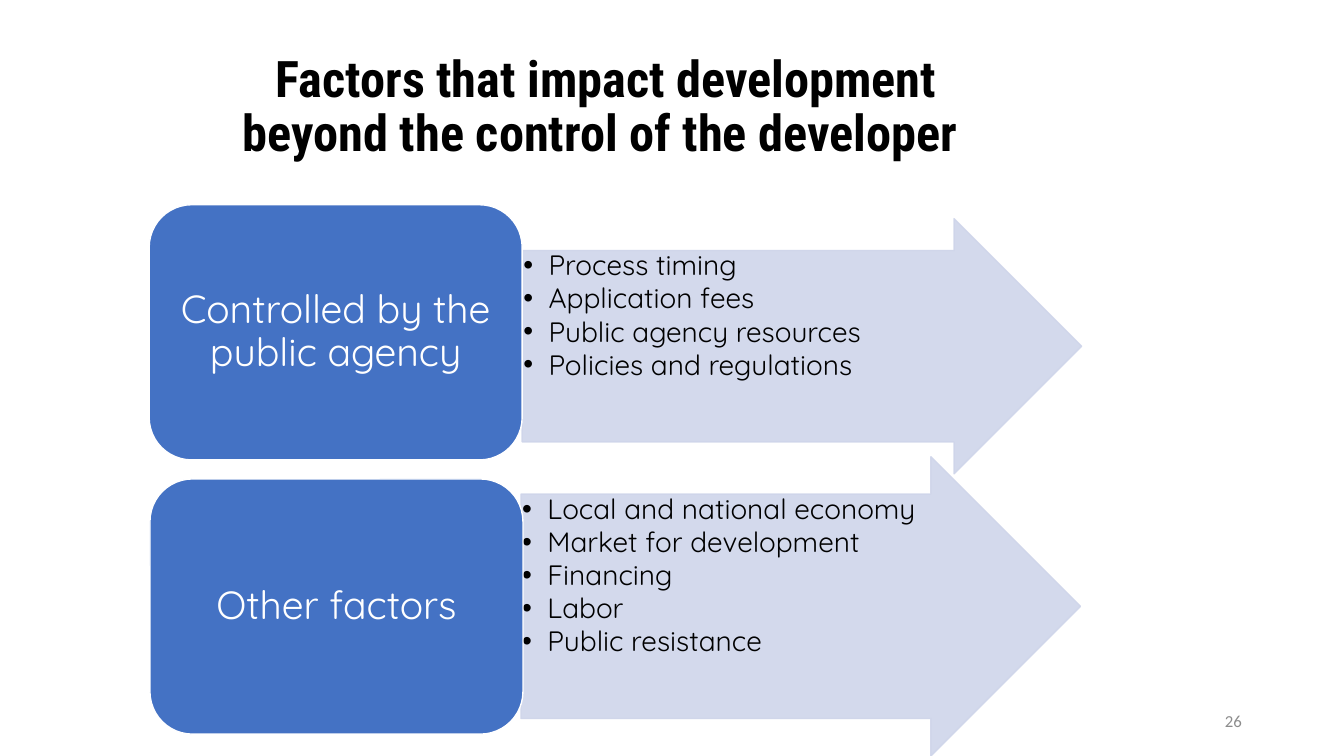
"""Build a slide on the factors that impact development beyond the developer's control."""
from dataclasses import dataclass

from lxml.etree import SubElement
from pptx import Presentation
from pptx.dml.color import RGBColor
from pptx.enum.shapes import MSO_SHAPE as Preset
from pptx.enum.text import MSO_ANCHOR as Anchor, PP_ALIGN as Align
from pptx.oxml.ns import qn
from pptx.util import Cm, Pt

COLORS = {"black": "000000", "white": "FFFFFF", "gray": "8C8C8C", "blue": "4472C4", "pale": "CFD5EA"}


@dataclass(frozen=True)
class Box:
    left: float
    top: float
    width: float
    height: float

    def lengths(self) -> list:
        return [Cm(value) for value in (self.left, self.top, self.width, self.height)]


@dataclass(frozen=True)
class TextStyle:
    font: str
    size: int
    color: str
    align: Align
    bold: bool = False
    spacing: float = 1.0
    after: int = 0
    bulleted: bool = False


@dataclass(frozen=True)
class FactorGroup:
    name: str
    card: Box
    arrow: Box
    factors: tuple[str, ...]


TITLE = TextStyle("Roboto Condensed", 36, "black", Align.CENTER, bold=True, spacing=0.9)
NUMBER = TextStyle("Calibri", 12, "gray", Align.RIGHT)
CARD = TextStyle("Quicksand", 28, "white", Align.CENTER, spacing=0.9)
FACTOR = TextStyle("Quicksand", 20, "black", Align.LEFT, spacing=0.9, after=2, bulleted=True)

GROUPS = (
    FactorGroup(
        "Controlled by the public agency",
        Box(3.76, 5.16, 9.4, 6.43),
        Box(13.16, 5.51, 14.1, 6.43),
        ("Process timing", "Application fees", "Public agency resources", "Policies and regulations"),
    ),
    FactorGroup(
        "Other factors",
        Box(3.78, 12.07, 9.4, 6.43),
        Box(13.13, 11.51, 14.1, 7.54),
        ("Local and national economy", "Market for development", "Financing", "Labor", "Public resistance"),
    ),
)


def rgb(name: str) -> RGBColor:
    return RGBColor.from_string(COLORS[name])


def add_bullet(paragraph) -> None:
    properties = paragraph._p.get_or_add_pPr()
    properties.set("marL", str(Cm(0.635)))
    properties.set("indent", str(-Cm(0.635)))
    SubElement(properties, qn("a:buFont"), typeface="Arial")
    SubElement(properties, qn("a:buChar"), char="•")


def write(shape, paragraphs: tuple[str, ...], style: TextStyle, anchor: Anchor,
          side: float = 0.25, edge: float = 0.13) -> None:
    frame = shape.text_frame
    frame.word_wrap = True
    frame.vertical_anchor = anchor
    frame.margin_left = frame.margin_right = Cm(side)
    frame.margin_top = frame.margin_bottom = Cm(edge)
    for index, text in enumerate(paragraphs):
        paragraph = frame.add_paragraph() if index else frame.paragraphs[0]
        paragraph.alignment = style.align
        paragraph.line_spacing = style.spacing
        paragraph.space_after = Pt(style.after)
        if style.bulleted:
            add_bullet(paragraph)
        for line_index, line in enumerate(text.split("\n")):
            if line_index:
                paragraph.add_line_break()
            run = paragraph.add_run()
            run.text = line
            run.font.name = style.font
            run.font.size = Pt(style.size)
            run.font.bold = style.bold
            run.font.color.rgb = rgb(style.color)


def add_text(slide, box: Box, text: str, style: TextStyle) -> None:
    write(slide.shapes.add_textbox(*box.lengths()), (text,), style, Anchor.MIDDLE)


def add_panel(slide, preset: Preset, box: Box, fill: str, line: str):
    shape = slide.shapes.add_shape(preset, *box.lengths())
    shape.shadow.inherit = False
    shape.fill.solid()
    shape.fill.fore_color.rgb = rgb(fill)
    shape.line.color.rgb = rgb(line)
    shape.line.width = Pt(1)
    return shape


def add_group(slide, group: FactorGroup) -> None:
    arrow = add_panel(slide, Preset.RIGHT_ARROW, group.arrow, "pale", "pale")
    arrow.adjustments[0] = 0.75
    arrow.adjustments[1] = 0.5
    for color in arrow._element.spPr.iter(qn("a:srgbClr")):
        SubElement(color, qn("a:alpha"), val="90000")
    write(arrow, group.factors, FACTOR, Anchor.TOP, side=0.03, edge=0.03)
    card = add_panel(slide, Preset.ROUNDED_RECTANGLE, group.card, "blue", "white")
    write(card, (group.name,), CARD, Anchor.MIDDLE, side=0.3, edge=0.15)


def main() -> None:
    presentation = Presentation()
    presentation.slide_width = Cm(33.87)
    presentation.slide_height = Cm(19.05)
    slide = presentation.slides.add_slide(presentation.slide_layouts[6])
    title = "Factors that impact development\nbeyond the control of the developer "
    add_text(slide, Box(0.91, 0.76, 28.73, 3.94), title, TITLE)
    add_text(slide, Box(23.93, 17.65, 7.62, 1.02), "26", NUMBER)
    for group in GROUPS:
        add_group(slide, group)
    presentation.save("out.pptx")


if __name__ == "__main__":
    main()
